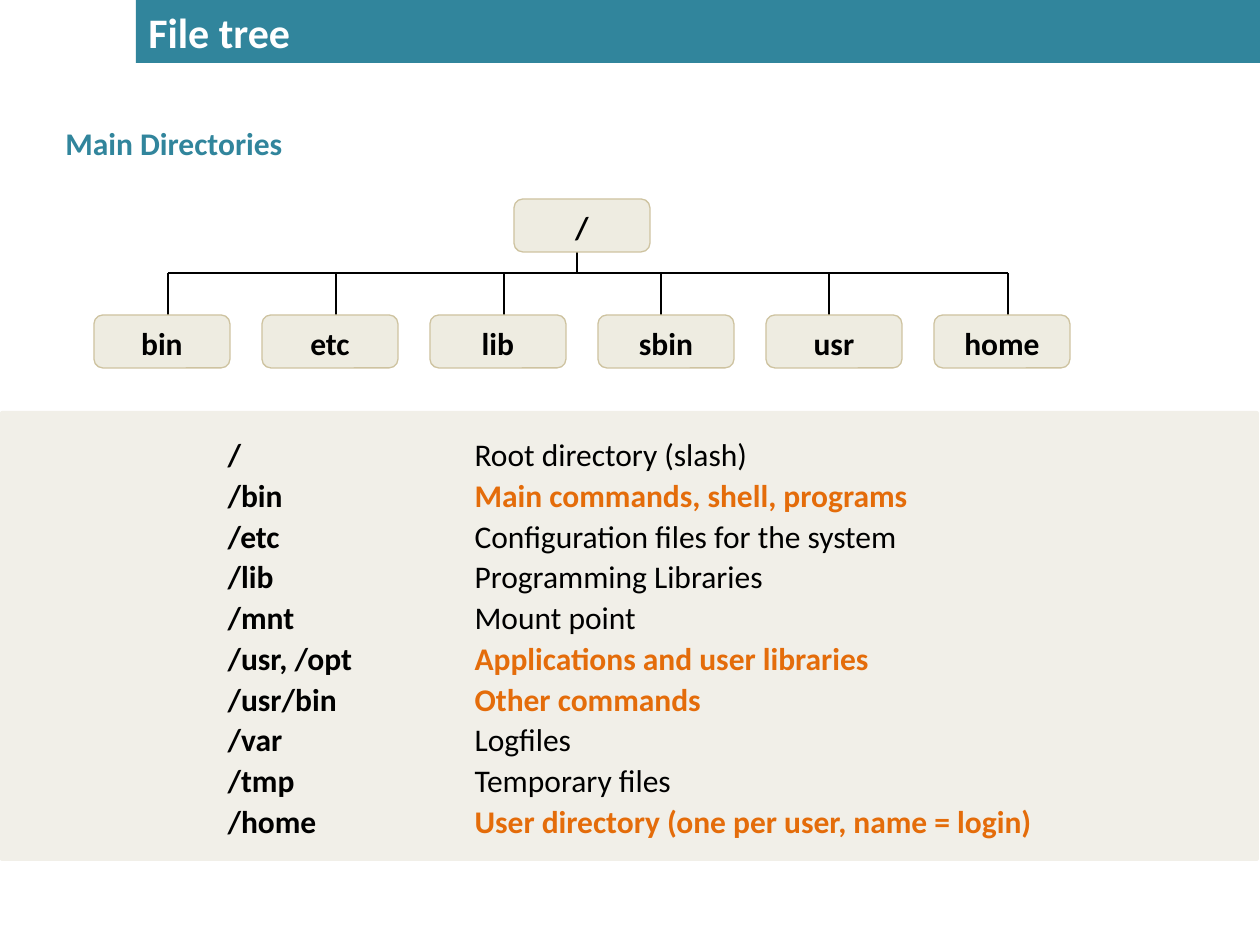
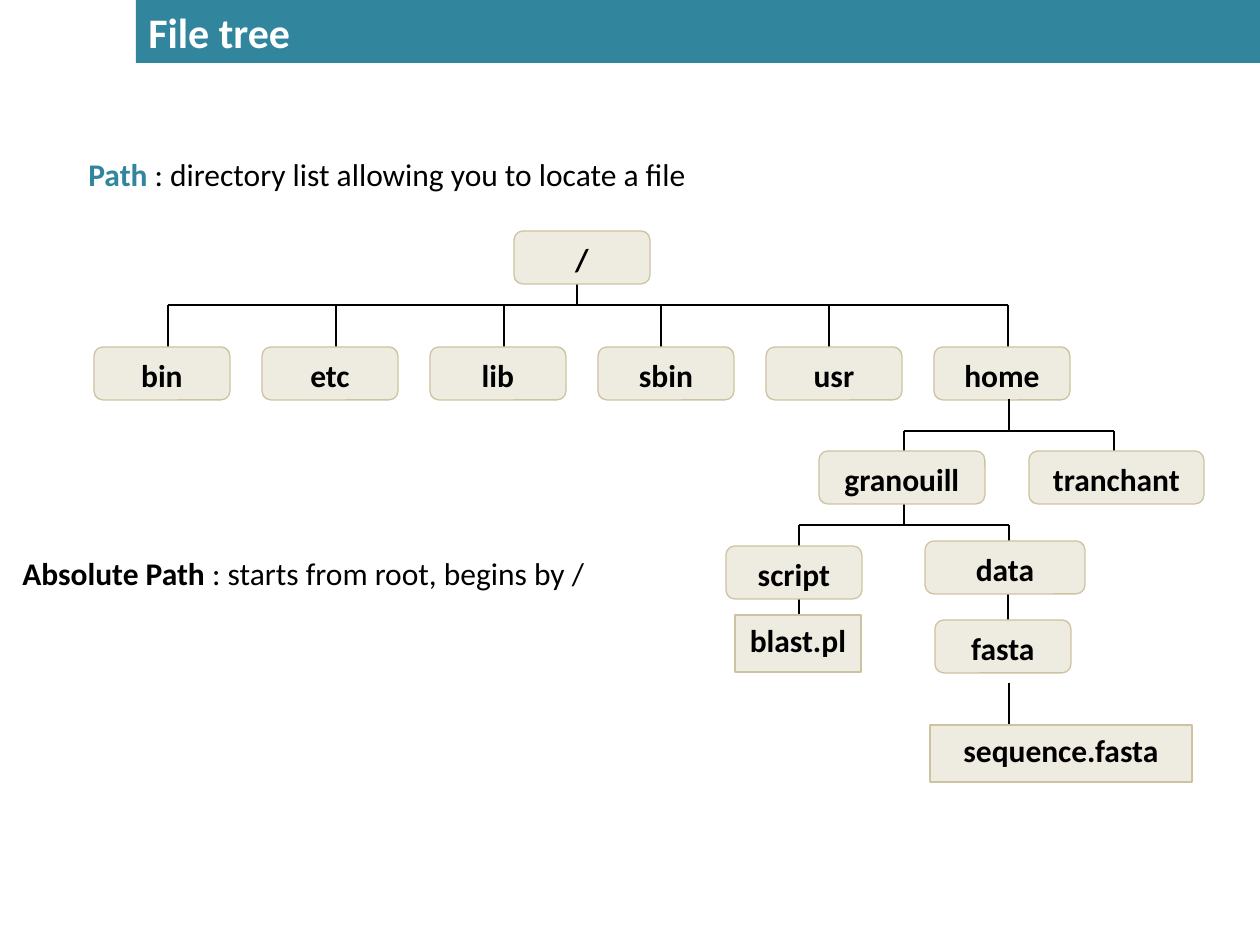
from dataclasses import dataclass

import lxml.etree
import pptx
import pptx.dml.color
import pptx.enum.shapes
import pptx.enum.text
import pptx.oxml.ns
import pptx.util

EMU_PER_PX = 914400 / 126
FONT = "Calibri"
TEAL, ORANGE, BLACK, WHITE = "31859C", "E46C0A", "000000", "FFFFFF"
NODE_FILL, NODE_LINE, PANEL_FILL = "EEECE1", "CEC3A0", "F1EFE8"
NODE_WIDTH, NODE_HEIGHT, FILE_HEIGHT = 136, 53, 57
COLUMN_STEP = 168
ROOT_DIRECTORIES = ["bin", "etc", "lib", "sbin", "usr", "home"]
ROOT_DROPS = [168, 336, 504, 661, 829, 1008]

SHAPES = pptx.enum.shapes.MSO_SHAPE
ALIGN = pptx.enum.text.PP_ALIGN
ANCHOR = pptx.enum.text.MSO_ANCHOR


@dataclass(frozen=True)
class Run:
    text: str
    bold: bool = False
    color: str = BLACK


@dataclass(frozen=True)
class Node:
    name: str
    left: int
    top: int
    width: int = NODE_WIDTH
    is_file: bool = False


@dataclass(frozen=True)
class Branch:
    """A stem down to a bar, with drops from the bar to the children."""
    stem: int
    top: int
    bar: int
    bottom: int
    drops: list[int]


@dataclass(frozen=True)
class Directory:
    name: str
    purpose: str
    important: bool = False


DIRECTORIES = [
    Directory("/", "Root directory (slash)"),
    Directory("/bin", "Main commands, shell, programs", True),
    Directory("/etc", "Configuration files for the system"),
    Directory("/lib", "Programming Libraries"),
    Directory("/mnt", "Mount point"),
    Directory("/usr, /opt", "Applications and user libraries", True),
    Directory("/usr/bin", "Other commands", True),
    Directory("/var", "Logfiles"),
    Directory("/tmp", "Temporary files"),
    Directory("/home", "User directory (one per user, name = login)", True),
]

HOME_BRANCHES = [
    Branch(1009, 399, 431, 462, [904, 1114]),
    Branch(904, 494, 525, 557, [799, 1009]),
]

HOME_NODES = [
    Node("granouill", 819, 451, 166),
    Node("tranchant", 1029, 451, 175),
    Node("script", 726, 546),
    Node("data", 925, 541, 160),
    Node("fasta", 935, 620),
    Node("blast.pl", 735, 615, 126, is_file=True),
    Node("sequence.fasta", 930, 725, 262, is_file=True),
]


def px(length: int) -> pptx.util.Emu:
    return pptx.util.Emu(round(length * EMU_PER_PX))


def rgb(color: str) -> pptx.dml.color.RGBColor:
    return pptx.dml.color.RGBColor.from_string(color)


def write_text(shape, lines: list[list[Run]], *, size: int = 18, align=ALIGN.LEFT,
               anchor=ANCHOR.TOP, spacing: float = 1.0, space_after: int = 0,
               inset: tuple[int, int] | None = None, tab: int | None = None) -> None:
    """Fill a shape with paragraphs; inset is (left, other sides)."""
    frame = shape.text_frame
    frame.word_wrap = True
    frame.vertical_anchor = anchor
    if inset is not None:
        frame.margin_left = px(inset[0])
        frame.margin_top = frame.margin_right = frame.margin_bottom = px(inset[1])
    for index, runs in enumerate(lines):
        paragraph = frame.add_paragraph() if index else frame.paragraphs[0]
        paragraph.alignment = align
        paragraph.line_spacing = spacing
        paragraph.space_after = pptx.util.Pt(space_after)
        if tab is not None:
            qn = pptx.oxml.ns.qn
            tabs = lxml.etree.SubElement(paragraph._p.get_or_add_pPr(), qn("a:tabLst"))
            lxml.etree.SubElement(tabs, qn("a:tab"), pos=str(px(tab)), algn="l")
        for item in runs:
            run = paragraph.add_run()
            run.text = item.text
            run.font.name = FONT
            run.font.size = pptx.util.Pt(size)
            run.font.bold = item.bold
            run.font.color.rgb = rgb(item.color)


def add_box(slide, kind, left: int, top: int, width: int, height: int,
            fill: str, line: str | None = None):
    shape = slide.shapes.add_shape(kind, px(left), px(top), px(width), px(height))
    shape.shadow.inherit = False
    shape.fill.solid()
    shape.fill.fore_color.rgb = rgb(fill)
    if line is None:
        shape.line.fill.background()
    else:
        shape.line.color.rgb = rgb(line)
        shape.line.width = pptx.util.Pt(0.75)
    return shape


def add_line(slide, x1: int, y1: int, x2: int, y2: int) -> None:
    connector = slide.shapes.add_connector(
        pptx.enum.shapes.MSO_CONNECTOR.STRAIGHT, px(x1), px(y1), px(x2), px(y2))
    connector.line.color.rgb = rgb(BLACK)
    connector.line.width = pptx.util.Pt(0.75)
    lxml.etree.SubElement(connector._element.spPr, pptx.oxml.ns.qn("a:effectLst"))


def add_branch(slide, branch: Branch) -> None:
    add_line(slide, branch.stem, branch.top, branch.stem, branch.bar)
    add_line(slide, branch.drops[0], branch.bar, branch.drops[-1], branch.bar)
    for x in branch.drops:
        add_line(slide, x, branch.bar, x, branch.bottom)


def add_node(slide, node: Node) -> None:
    kind = SHAPES.RECTANGLE if node.is_file else SHAPES.ROUNDED_RECTANGLE
    height = FILE_HEIGHT if node.is_file else NODE_HEIGHT
    shape = add_box(slide, kind, node.left, node.top, node.width, height,
                    NODE_FILL, NODE_LINE)
    write_text(shape, [[Run(node.name, True)]], align=ALIGN.CENTER, space_after=6)


def add_root_tree(slide, top: int) -> None:
    add_branch(slide, Branch(577, top + 10, top + 74, top + 136, ROOT_DROPS))
    add_node(slide, Node("/", 514, top))
    for column, name in enumerate(ROOT_DIRECTORIES):
        add_node(slide, Node(name, 94 + column * COLUMN_STEP, top + 116))


def add_statement(slide, left: int, top: int, runs: list[Run]) -> None:
    box = slide.shapes.add_textbox(px(left), px(top), px(1149), px(53))
    write_text(box, [runs], spacing=1.04)


def add_titled_slide(presentation, title: str):
    slide = presentation.slides.add_slide(presentation.slide_layouts[6])
    band = add_box(slide, SHAPES.RECTANGLE, 136, 0, 1124, 63, TEAL)
    write_text(band, [[Run(title, True, WHITE)]], size=24)
    return slide


def add_directories_slide(presentation) -> None:
    slide = add_titled_slide(presentation, "File tree")
    add_statement(slide, 53, 116, [Run("Main Directories", True, TEAL)])
    add_root_tree(slide, 199)
    panel = add_box(slide, SHAPES.ROUNDED_RECTANGLE, 0, 411, 1259, 450, PANEL_FILL)
    panel.adjustments[0] = 0.005
    lines = [[Run(f"{directory.name}\t", True),
              Run(directory.purpose, directory.important,
                  ORANGE if directory.important else BLACK)]
             for directory in DIRECTORIES]
    write_text(panel, lines, anchor=ANCHOR.MIDDLE, spacing=1.08, inset=(227, 0), tab=247)


def add_path_slide(presentation) -> None:
    slide = add_titled_slide(presentation, "File tree")
    add_statement(slide, 76, 147, [
        Run("Path", True, TEAL),
        Run(" : directory list allowing you to locate a file")])
    add_root_tree(slide, 231)
    for branch in HOME_BRANCHES:
        add_branch(slide, branch)
    for x, top, bottom in [(799, 599, 630), (1008, 593, 625), (1009, 683, 725)]:
        add_line(slide, x, top, x, bottom)
    for node in HOME_NODES:
        add_node(slide, node)
    add_statement(slide, 10, 546, [
        Run("Absolute Path ", True),
        Run(": starts from root, begins by /")])


def main() -> None:
    presentation = pptx.Presentation()
    presentation.slide_width = px(1260)
    presentation.slide_height = px(945)
    add_directories_slide(presentation)
    add_path_slide(presentation)
    presentation.save("out.pptx")


if __name__ == "__main__":
    main()
